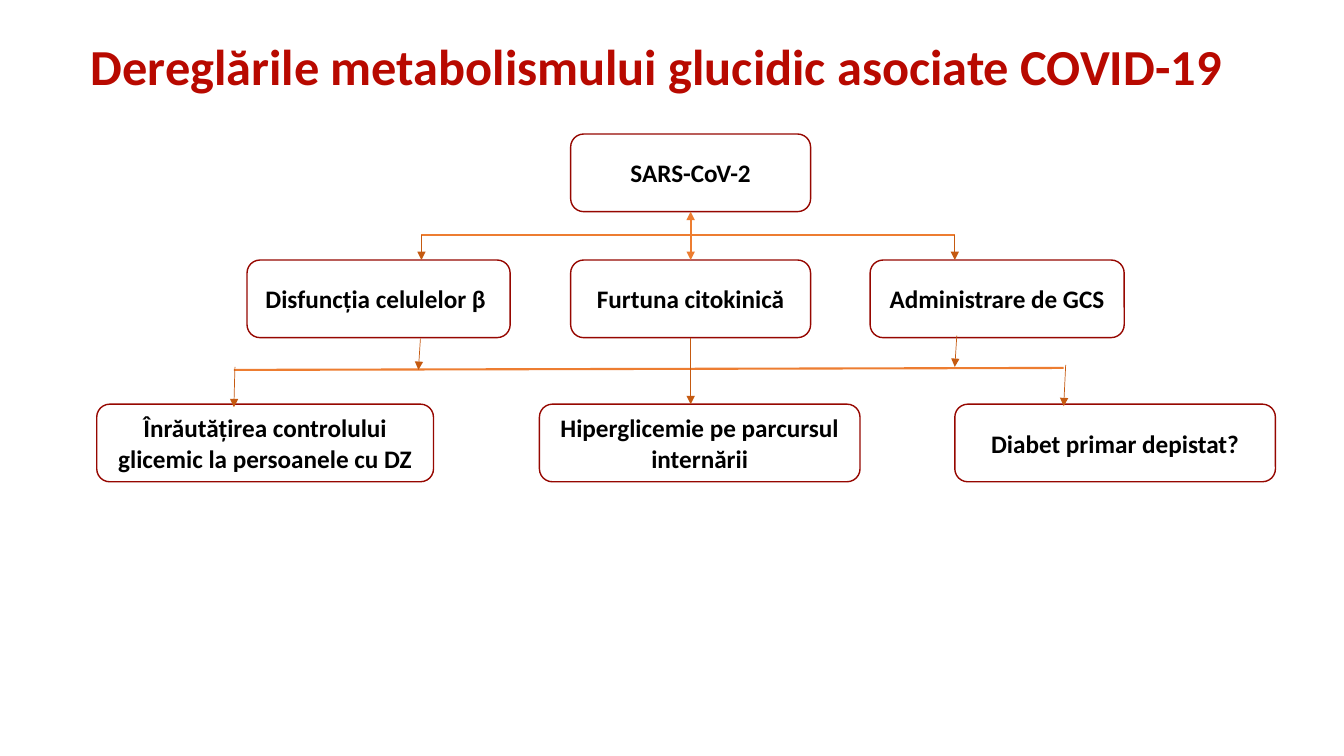
from lxml.etree import SubElement
from pptx import Presentation
from pptx.dml.color import RGBColor
from pptx.enum.shapes import MSO_CONNECTOR as Connector, MSO_SHAPE as Shape
from pptx.enum.text import MSO_ANCHOR as Anchor, PP_ALIGN as Align
from pptx.oxml.ns import qn
from pptx.util import Inches, Pt

COLORS = {
    "title": "B80900",
    "text": "000000",
    "border": "960700",
    "bar": "ED7D31",
    "arrow": "C55A11",
}
TITLE_FONT = {"name": "Calibri", "size": Pt(36), "bold": True}
BOX_FONT = {"name": "Calibri", "size": Pt(18), "bold": True}
FRAME = {"word_wrap": True, "vertical_anchor": Anchor.MIDDLE}
BOX_HEIGHT = 0.77


def apply_format(target, values):
    for name, value in values.items():
        setattr(target, name, value)


class Diagram:
    def __init__(self, slide, colors):
        self.slide = slide
        self.colors = colors

    def rgb(self, key):
        return RGBColor.from_string(self.colors[key])

    def label(self, shape, words, font, color, paragraph_format):
        apply_format(shape.text_frame, FRAME)
        paragraph = shape.text_frame.paragraphs[0]
        apply_format(paragraph, paragraph_format)
        run = paragraph.add_run()
        run.text = words
        apply_format(run.font, font)
        run.font.color.rgb = self.rgb(color)

    def title(self, words, *place):
        heading = self.slide.shapes.add_textbox(*map(Inches, place))
        self.label(heading, words, TITLE_FONT, "title",
                   {"alignment": Align.LEFT, "line_spacing": 0.9})

    def box(self, words, left, top, width):
        place = map(Inches, (left, top, width, BOX_HEIGHT))
        node = self.slide.shapes.add_shape(Shape.ROUNDED_RECTANGLE, *place)
        node.shadow.inherit = False
        node.fill.background()
        node.line.color.rgb = self.rgb("border")
        node.line.width = Pt(1)
        self.label(node, words, BOX_FONT, "text", {"alignment": Align.CENTER})
        return node

    def line(self, start, end, color, width, arrows=()):
        link = self.slide.shapes.add_connector(
            Connector.STRAIGHT, *map(Inches, (*start, *end)))
        link.line.color.rgb = self.rgb(color)
        link.line.width = Pt(width)
        properties = link._element.spPr
        outline = properties.find(qn("a:ln"))
        for side in arrows:
            SubElement(outline, qn(f"a:{side}"), type="triangle")
        SubElement(properties, qn("a:effectLst"))
        return link

    def bar(self, start, end, arrows=()):
        return self.line(start, end, "bar", 1.5, arrows)

    def arrow(self, start, end):
        return self.line(start, end, "arrow", 0.5, ("tailEnd",))


def main():
    deck = Presentation()
    apply_format(deck, {"slide_width": Inches(13.33),
                        "slide_height": Inches(7.5)})
    diagram = Diagram(deck.slides.add_slide(deck.slide_layouts[6]), COLORS)

    diagram.title("Dereglările metabolismului glucidic asociate COVID-19",
                  0.8, 0.2, 12.27, 0.98)

    virus = diagram.box("SARS-CoV-2", 5.66, 1.33, 2.38)
    mechanisms = [
        ("Disfuncția celulelor β ", 2.45, 2.61),
        ("Furtuna citokinică", 5.66, 2.38),
        ("Administrare de GCS", 8.63, 2.52),
    ]
    outcomes = [
        ("Înrăutățirea controlului glicemic la persoanele cu DZ", 0.96, 3.34),
        ("Hiperglicemie pe parcursul internării", 5.35, 3.18),
        ("Diabet primar depistat?", 9.47, 3.18),
    ]
    _, cytokine_storm, _ = [diagram.box(words, left, 2.58, width)
                            for words, left, width in mechanisms]
    for words, left, width in outcomes:
        diagram.box(words, left, 4.01, width)

    virus_to_storm = diagram.bar((6.85, 2.1), (6.85, 2.58),
                                 ("headEnd", "tailEnd"))
    virus_to_storm.begin_connect(virus, 2)
    virus_to_storm.end_connect(cytokine_storm, 0)

    diagram.bar((4.18, 2.33), (9.47, 2.33))
    for x in (9.47, 4.18):
        diagram.arrow((x, 2.33), (x, 2.58))

    diagram.bar((2.32, 3.67), (10.55, 3.65))
    storm_to_outcome = diagram.arrow((6.85, 3.35), (6.85, 4.01))
    storm_to_outcome.begin_connect(cytokine_storm, 2)
    for start, end in [
        ((10.57, 3.62), (10.55, 4.03)),
        ((2.33, 3.64), (2.32, 4.04)),
        ((9.49, 3.33), (9.47, 3.64)),
        ((4.17, 3.36), (4.15, 3.67)),
    ]:
        diagram.arrow(start, end)

    deck.save("out.pptx")


if __name__ == "__main__":
    main()
